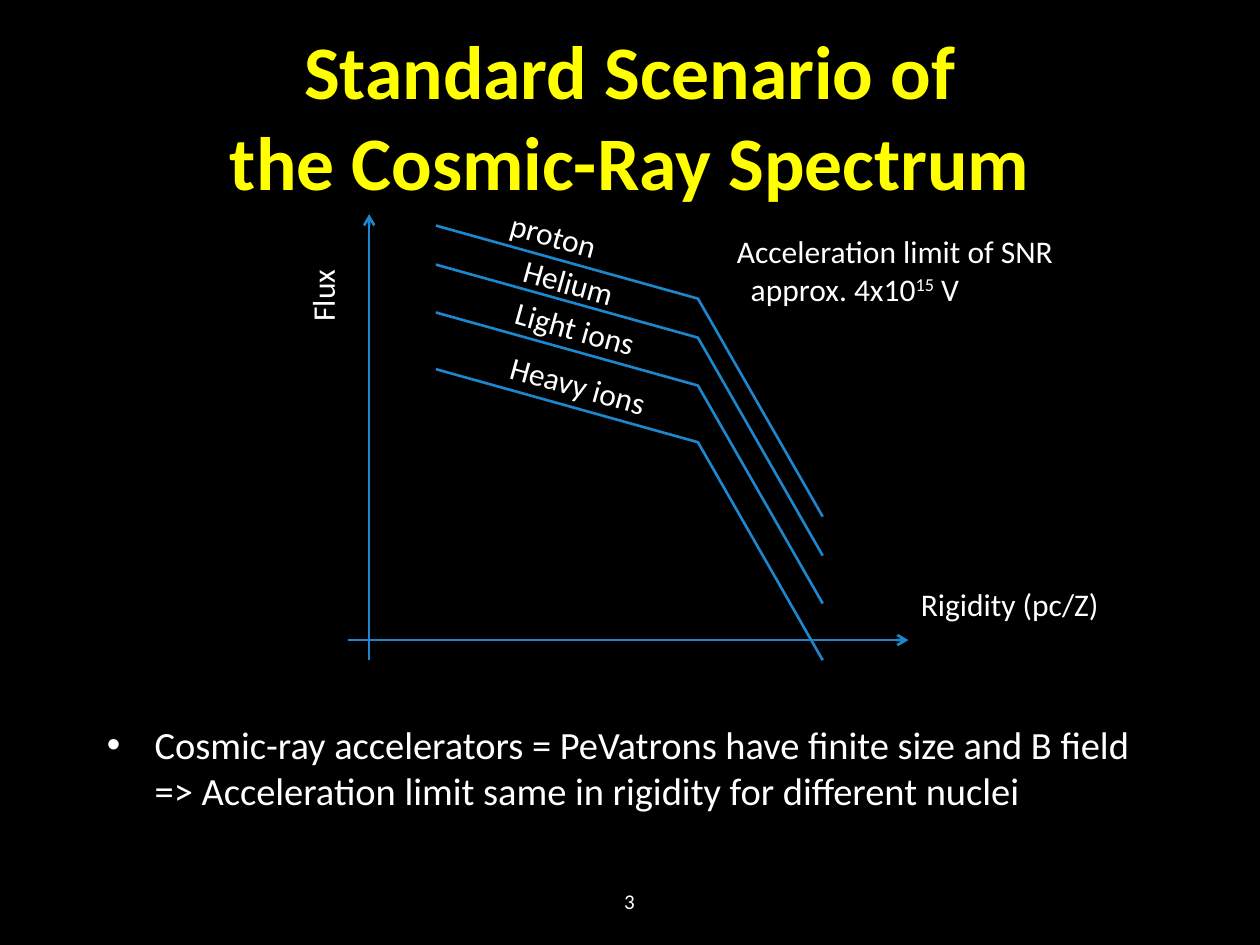
"""Build the slide on the standard scenario of the cosmic-ray spectrum."""
from dataclasses import dataclass

from lxml.etree import SubElement
from pptx import Presentation
from pptx.dml.color import RGBColor
from pptx.enum.shapes import MSO_CONNECTOR as Connector
from pptx.enum.text import MSO_ANCHOR as Anchor, PP_ALIGN as Align
from pptx.oxml.ns import qn
from pptx.util import Inches, Pt


@dataclass(frozen=True)
class Theme:
    font: str = "Calibri"
    background: RGBColor = RGBColor(0, 0, 0)
    heading: RGBColor = RGBColor(255, 255, 0)
    text: RGBColor = RGBColor(255, 255, 255)
    curve: RGBColor = RGBColor(0x1D, 0x86, 0xCD)
    title_size: float = 43.2
    body_size: float = 22
    label_size: float = 18
    number_size: float = 12
    line_width: float = 1.5


theme = Theme()


def write(paragraph, text, size=theme.label_size, color=theme.text, bold=False,
          align=Align.LEFT, superscript=False):
    paragraph.alignment = align
    run = paragraph.add_run()
    run.text = text
    run.font.name = theme.font
    run.font.size = Pt(size)
    run.font.bold = bold
    run.font.color.rgb = color
    if superscript:
        run._r.get_or_add_rPr().set("baseline", "30000")


def add_frame(left, top, width, height, rotation=0, wrap=False):
    box = slide.shapes.add_textbox(Inches(left), Inches(top), Inches(width), Inches(height))
    box.rotation = rotation
    box.text_frame.word_wrap = wrap
    return box.text_frame


deck = Presentation()
deck.slide_width, deck.slide_height = Inches(10), Inches(7.5)
slide = deck.slides.add_slide(deck.slide_layouts[5])
slide.background.fill.solid()
slide.background.fill.fore_color.rgb = theme.background

title = slide.shapes.title
title.left, title.top = Inches(0.75), Inches(0.13)
title.width, title.height = Inches(8.5), Inches(1.56)
title.text_frame.word_wrap = True
title.text_frame.vertical_anchor = Anchor.MIDDLE
heading = title.text_frame.paragraphs[0]
heading_format = dict(size=theme.title_size, color=theme.heading, bold=True, align=Align.CENTER)
write(heading, "Standard Scenario of", **heading_format)
heading.add_line_break()
write(heading, "the Cosmic-Ray Spectrum", **heading_format)

conclusion = add_frame(0.75, 5.67, 8.5, 1.29, wrap=True).paragraphs[0]
indents = conclusion._p.get_or_add_pPr()
indents.set("marL", str(Inches(0.38)))
indents.set("indent", str(-Inches(0.38)))
SubElement(indents, qn("a:buFont"), typeface="Arial")
SubElement(indents, qn("a:buChar"), char="•")
write(conclusion, "Cosmic-ray accelerators = PeVatrons have finite size and B field "
      "=> Acceleration limit same in rigidity for different nuclei", size=theme.body_size)

page_number = add_frame(4.62, 6.95, 0.75, 0.4, wrap=True)
page_number.vertical_anchor = Anchor.MIDDLE
write(page_number.paragraphs[0], "3", size=theme.number_size, align=Align.CENTER)

for start in (1.79, 2.1, 2.48, 2.93):
    builder = slide.shapes.build_freeform(Inches(3.46), Inches(start))
    knee = (Inches(5.54), Inches(start + 0.58))
    end = (Inches(6.53), Inches(start + 2.31))
    builder.add_line_segments([knee, end], close=False)
    spectrum = builder.convert_to_shape()
    spectrum.shadow.inherit = False
    spectrum.fill.background()
    spectrum.line.color.rgb = theme.curve
    spectrum.line.width = Pt(theme.line_width)

for ends in ((2.76, 5.08, 7.21, 5.08), (2.93, 5.24, 2.93, 1.7)):
    axis = slide.shapes.add_connector(Connector.STRAIGHT, *map(Inches, ends))
    axis.line.color.rgb = theme.curve
    axis.line.width = Pt(theme.line_width)
    SubElement(axis.line._get_or_add_ln(), qn("a:tailEnd"), type="arrow")
    SubElement(axis._element.spPr, qn("a:effectLst"))

for label, left, top, width, rotation in (
    ("Rigidity (pc/Z)", 7.21, 4.59, 1.84, 0),
    ("Flux", 2.21, 2.1, 0.7, 270),
    ("proton", 3.95, 1.67, 0.92, 15.5),
    ("Helium", 4.05, 2.05, 1.02, 15.5),
    ("Light ions", 3.98, 2.42, 1.29, 15.5),
    ("Heavy ions", 3.94, 2.87, 1.4, 15.5),
):
    write(add_frame(left, top, width, 0.4, rotation).paragraphs[0], label)

limit = add_frame(5.75, 1.79, 3.02, 0.71)
write(limit.paragraphs[0], "Acceleration limit of SNR")
limit_value = limit.add_paragraph()
limit_value._p.get_or_add_pPr().set("marL", str(Inches(0.11)))
write(limit_value, "approx. 4x10")
write(limit_value, "15", superscript=True)
write(limit_value, " V")

deck.save("out.pptx")
